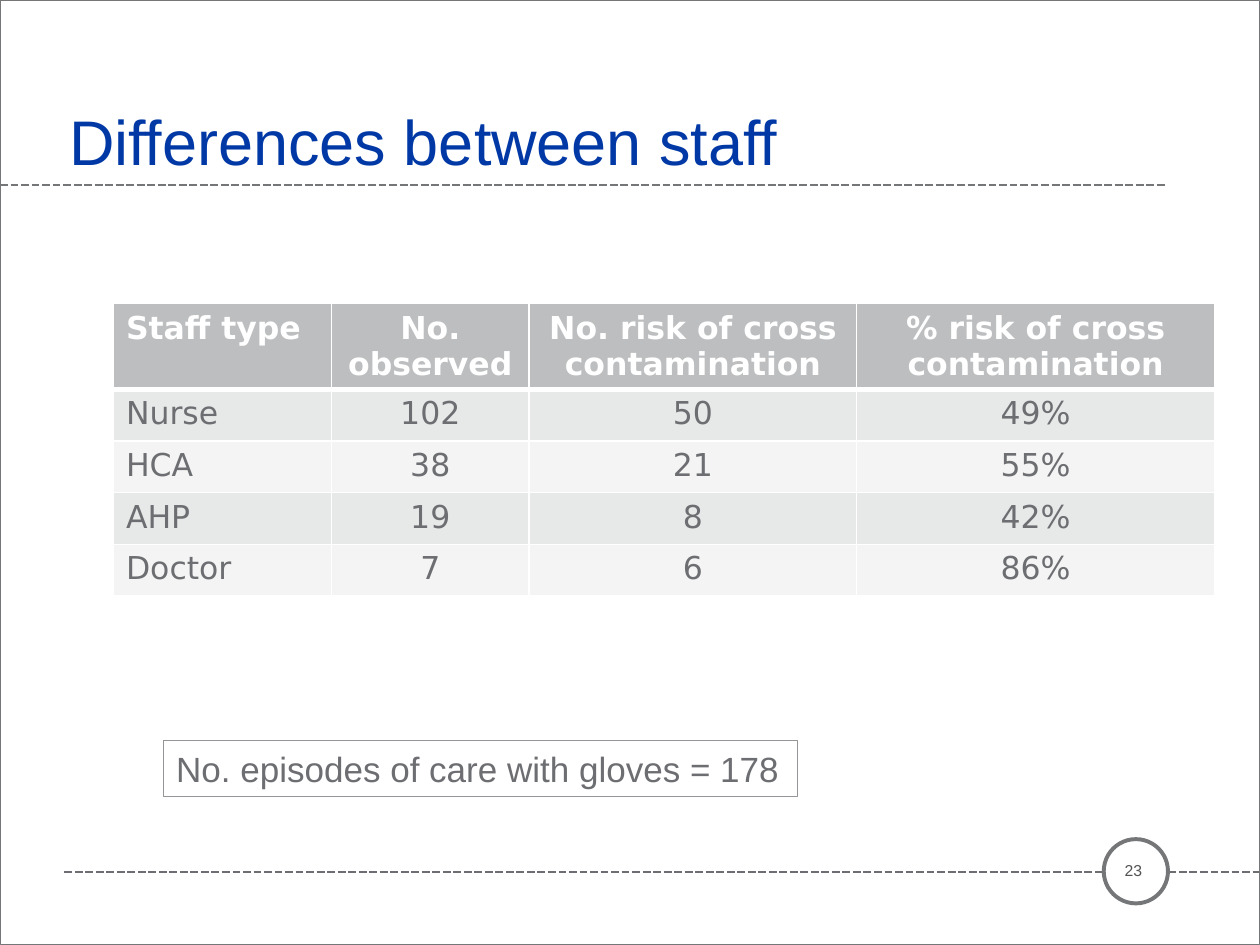
from lxml import etree
from pptx import Presentation
from pptx.dml.color import RGBColor
from pptx.enum.dml import MSO_LINE
from pptx.enum.shapes import MSO_CONNECTOR, MSO_SHAPE
from pptx.enum.text import MSO_ANCHOR, MSO_AUTO_SIZE, PP_ALIGN
from pptx.oxml.ns import qn
from pptx.util import Inches, Pt

LEFT, CENTER = PP_ALIGN.LEFT, PP_ALIGN.CENTER
TOP, MIDDLE, BOTTOM = MSO_ANCHOR.TOP, MSO_ANCHOR.MIDDLE, MSO_ANCHOR.BOTTOM
DASH = MSO_LINE.SQUARE_DOT
STRAIGHT = MSO_CONNECTOR.STRAIGHT
RECTANGLE, OVAL = MSO_SHAPE.RECTANGLE, MSO_SHAPE.OVAL
FIT_SHAPE = MSO_AUTO_SIZE.SHAPE_TO_FIT_TEXT

WHITE, GRAY, DARK_GRAY = "FFFFFF", "747678", "6D6E71"
HEADER_FILL, BAND_FILLS = "BCBEC0", ("E7E8E8", "F4F4F4")

TITLE = "Differences between staff"
PAGE_NUMBER = "23"
EPISODES = "No. episodes of care with gloves = 178"
STAFF = [
    ("Staff type", "No. observed", "No. risk of cross contamination",
     "% risk of cross contamination"),
    ("Nurse", "102", "50", "49%"),
    ("HCA", "38", "21", "55%"),
    ("AHP", "19", "8", "42%"),
    ("Doctor", "7", "6", "86%"),
]
COLUMN_WIDTHS = (1.73, 1.57, 2.6, 2.84)
ROW_HEIGHT = 0.41
# left, y, right, color
DASHED_RULES = [(0.51, 6.92, 10, DARK_GRAY), (0, 1.47, 9.25, GRAY)]

TITLE_FONT = {"name": "Arial", "size": Pt(36), "color": "0039A6"}
NUMBER_FONT = {"name": "Arial", "size": Pt(9), "color": "525355"}
EPISODES_FONT = {"name": "Arial", "size": Pt(20), "color": DARK_GRAY}
HEADER_FONT = {"name": "DejaVu Sans", "size": Pt(18), "bold": True, "color": WHITE}
BODY_FONT = HEADER_FONT | {"bold": False, "color": DARK_GRAY}


def rgb(color):
    return RGBColor.from_string(color)


def write(frame, text, font, align=LEFT):
    paragraph = frame.paragraphs[0]
    paragraph.alignment = align
    run = paragraph.add_run()
    run.text = text
    for key, value in font.items():
        if key == "color":
            run.font.color.rgb = rgb(value)
        else:
            setattr(run.font, key, value)


def add_text(slide, box, text, font, anchor, align=LEFT):
    frame = slide.shapes.add_textbox(*map(Inches, box)).text_frame
    frame.word_wrap = True
    frame.vertical_anchor = anchor
    write(frame, text, font, align)


def add_outlined(slide, kind, box, color, width, fill=None):
    shape = slide.shapes.add_shape(kind, *map(Inches, box))
    shape.shadow.inherit = False
    if fill:
        shape.fill.solid()
        shape.fill.fore_color.rgb = rgb(fill)
    else:
        shape.fill.background()
    shape.line.color.rgb = rgb(color)
    shape.line.width = Pt(width)
    return shape


def add_dashed_rule(slide, left, y, right, color):
    rule = slide.shapes.add_connector(STRAIGHT, *map(Inches, (left, y, right, y)))
    rule.line.color.rgb = rgb(color)
    rule.line.width = Pt(1.5)
    rule.line.dash_style = DASH
    etree.SubElement(rule._element.spPr, qn("a:effectLst"))


def set_borders(cell, widths):
    """Put white borders, given in points by side, ahead of the cell's fill."""
    properties = cell._tc.get_or_add_tcPr()
    for index, (side, width) in enumerate(widths.items()):
        border = etree.Element(qn(f"a:ln{side}"), w=str(Pt(width)))
        fill = etree.SubElement(border, qn("a:solidFill"))
        etree.SubElement(fill, qn("a:srgbClr"), val=WHITE)
        properties.insert(index, border)


def add_staff_table(slide):
    table_frame = slide.shapes.add_table(
        len(STAFF), len(COLUMN_WIDTHS), Inches(0.9), Inches(2.41),
        Inches(sum(COLUMN_WIDTHS)), Inches(2.33))
    table = table_frame.table
    for column, width in zip(table.columns, COLUMN_WIDTHS):
        column.width = Inches(width)
    for r, values in enumerate(STAFF):
        table.rows[r].height = Inches(ROW_HEIGHT)
        for c, value in enumerate(values):
            cell = table.cell(r, c)
            cell.fill.solid()
            cell.fill.fore_color.rgb = rgb(BAND_FILLS[(r - 1) % 2] if r else HEADER_FILL)
            set_borders(cell, {"L": 1, "R": 1, "T": 3 if r == 1 else 1,
                               "B": 3 if r == 0 else 1})
            write(cell.text_frame, value, BODY_FONT if r else HEADER_FONT,
                  CENTER if c else LEFT)
    table_frame.height = Inches(2.33)


def main():
    deck = Presentation()
    deck.slide_width, deck.slide_height = Inches(10), Inches(7.5)
    slide = deck.slides.add_slide(deck.slide_layouts[6])

    for rule in DASHED_RULES:
        add_dashed_rule(slide, *rule)
    add_outlined(slide, OVAL, (8.76, 6.66, 0.51, 0.51), GRAY, 2.25, WHITE)
    add_outlined(slide, RECTANGLE, (0, 0, 10, 7.5), GRAY, 0.5)

    add_staff_table(slide)
    add_text(slide, (0.45, 0.53, 7.62, 0.93), TITLE, TITLE_FONT, BOTTOM)
    add_text(slide, (8.78, 6.68, 0.43, 0.45), PAGE_NUMBER, NUMBER_FONT, MIDDLE, CENTER)

    episodes = add_outlined(slide, RECTANGLE, (1.3, 5.88, 5.03, 0.44), "939598", 0.75)
    frame = episodes.text_frame
    frame.word_wrap = False
    frame.auto_size = FIT_SHAPE
    frame.vertical_anchor = TOP
    write(frame, EPISODES, EPISODES_FONT)
    frame.paragraphs[0].space_after = Pt(6)

    deck.save("out.pptx")


if __name__ == "__main__":
    main()
